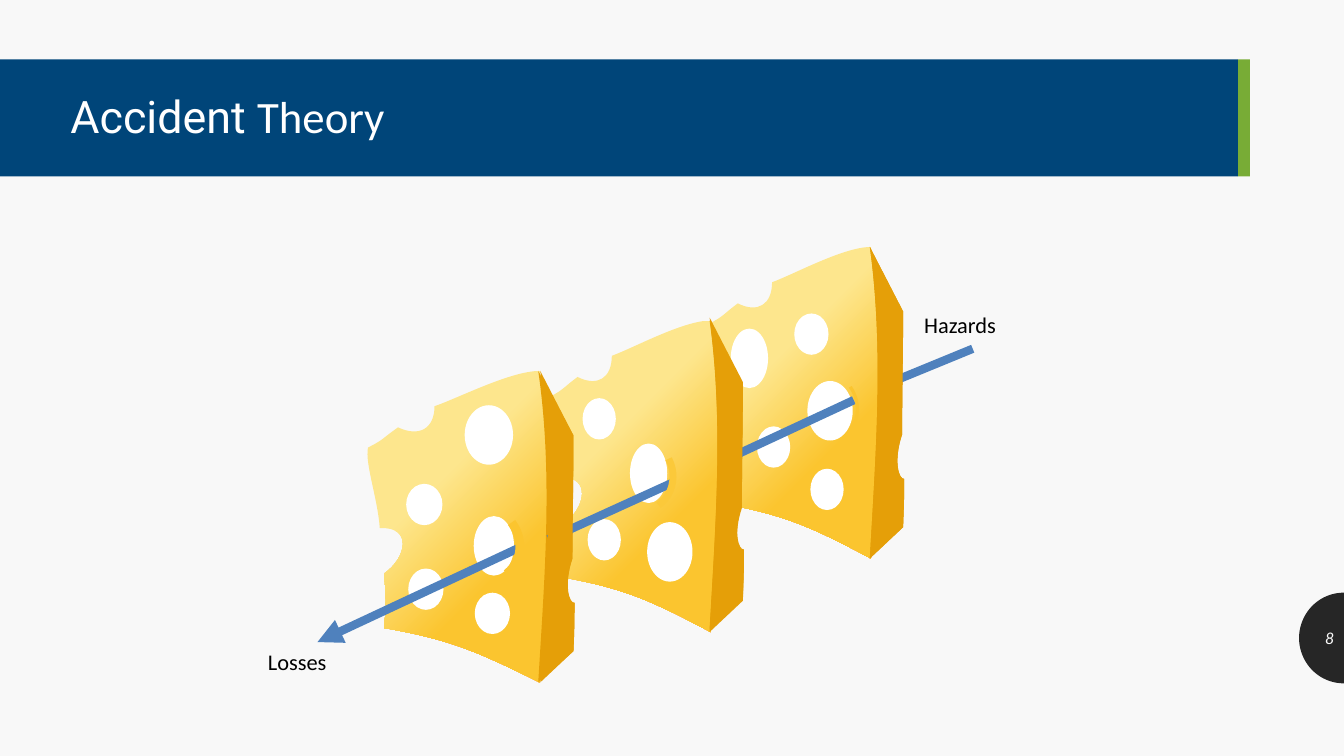
"""Build the Accident Theory slide with three cheese slices and a hazard path."""
import math

import pptx
import pptx.dml.color
import pptx.enum.shapes
import pptx.enum.text
import pptx.oxml.ns
import pptx.util
from lxml import etree

PX = 9144
KIND = pptx.enum.shapes.MSO_SHAPE
ALIGN = pptx.enum.text.PP_ALIGN
ANCHOR = pptx.enum.text.MSO_ANCHOR
qn = pptx.oxml.ns.qn
rgb = pptx.dml.color.RGBColor.from_string

deck = pptx.Presentation()
deck.slide_width, deck.slide_height = 4000 * PX // 3, 750 * PX
slide = deck.slides.add_slide(deck.slide_layouts[6])
slide.background.fill.solid()
slide.background.fill.fore_color.rgb = rgb("F8F8F8")
shapes = slide.shapes


def paint(shape, color):
    shape.shadow.inherit = False
    shape.line.fill.background()
    shape.fill.solid()
    shape.fill.fore_color.rgb = rgb(color)


def trace(parts, left, top, base, width):
    pen = shapes.build_freeform(left, top, scale=PX)
    pen.add_line_segments([(left + base, top + 309)], close=True)
    shape = pen.convert_to_shape()
    shape.width = width * PX
    track = shape._element.find(".//" + qn("a:path"))
    for step in list(track):
        track.remove(step)
    for spot, part in enumerate(parts):
        name = "a:moveTo" if spot == 0 else "a:lnTo" if len(part) == 2 else "a:cubicBezTo"
        step = etree.SubElement(track, qn(name))
        for x, y in zip(part[::2], part[1::2]):
            etree.SubElement(step, qn("a:pt"), x=str(x), y=str(y))
    etree.SubElement(track, qn("a:close"))
    return shape


turns = [math.radians(90 + 4.5 * step) for step in range(41)]
arch = [((4000 / 3 + 44.5 * math.cos(turn)) * PX, (633 - 45 * math.sin(turn)) * PX)
        for turn in turns]
badge = shapes.build_freeform(*arch[0], scale=1)
badge.add_line_segments(arch[1:], close=True)
paint(badge.convert_to_shape(), "262626")

for left, width, color in [(1228, 12, "78AC36"), (0, 1228, "004579")]:
    band = shapes.add_shape(KIND.RECTANGLE, left * PX, 59 * PX, width * PX, 116 * PX)
    paint(band, color)

face = [(1, 76), (16, 68, 13, 68, 29, 56), (49, 66, 63, 57, 63, 35),
        (85, 27, 134, 0, 161, 0), (176, 86, 171, 223, 161, 309),
        (101, 277, 75, 266, 16, 255), (19, 224, 17, 217, 16, 201),
        (37, 186, 43, 154, 12, 156), (10, 126, -2, 92, 1, 76)]
side = [(0, 0), (33, 64), (33, 108, 32, 150, 32, 186), (23, 213, 29, 231, 34, 230),
        (34, 245, 34, 253, 33, 278), (0, 309), (6, 203, 14, 102, 0, 0)]
slices = [
    (703, 245, 170, 863, 34, [(801, 378, 45, 59), (788, 311, 34, 41), (725, 326, 37, 59),
                              (751, 423, 33, 41), (804, 465, 33, 41)]),
    (544, 318, 170, 704, 34, [(642, 518, 45, 59), (625, 440, 37, 59), (583, 515, 33, 41),
                              (578, 395, 33, 41)]),
    (364, 368, 181, 534, 36, [(461, 402, 48, 59), (403, 480, 36, 41), (470, 512, 40, 59),
                              (405, 564, 35, 41), (471, 588, 35, 41)]),
]
for left, top, wide, edge, thick, holes in slices:
    front = trace(face, left, top, 170, wide)
    paint(front, "FBC52F")
    front.fill.gradient()
    front.fill.gradient_angle = 315
    stops = front.fill.gradient_stops
    for stop, spot, color in zip(stops, (0.37, 0.68), ("FDE68D", "FBC52F")):
        stop.position = spot
        stop.color.rgb = rgb(color)
    paint(trace(side, edge, top, 34, thick), "E59F08")
    for hole in holes:
        paint(shapes.add_shape(KIND.OVAL, *[size * PX for size in hole]), "FFFFFF")

beams = [(516, 543, 315, 637), (667, 479, 544, 535),
         (847, 397, 733, 450), (965, 346, 892, 376)]
for spot, ends in enumerate(beams):
    beam = shapes.add_connector(pptx.enum.shapes.MSO_CONNECTOR.STRAIGHT,
                                *[end * PX for end in ends])
    beam.line.color.rgb = rgb("4F81BD")
    beam.line.width = pptx.util.Pt(6)
    etree.SubElement(beam._element.spPr, qn("a:effectLst"))
    if spot == 0:
        etree.SubElement(beam.line._get_or_add_ln(), qn("a:tailEnd"), type="triangle")

for left, top in [(536, 368), (704, 315), (863, 245)]:
    paint(trace(side, left, top, 34, 34), "E59F08")

rims = [(443, 505, 52, 162, 6.25, "FBC52F"), (595, 436, 54.8, 167.03, 5, "FBC93A"),
        (778, 369, 54.8, 162, 2.25, "FBC52F")]
for left, top, turn, start, weight, color in rims:
    rim = shapes.add_shape(KIND.ARC, left * PX, top * PX, 74 * PX, 70 * PX)
    rim.shadow.inherit = False
    rim.rotation = turn
    rim.adjustments[0] = start
    rim.fill.background()
    rim.line.color.rgb = rgb(color)
    rim.line.width = pptx.util.Pt(weight)

labels = [
    ((60, 61, 930, 114), [("Accident ", "Roboto"), ("Theory", "Calibri")], 32, "FFFFFF",
     ANCHOR.MIDDLE, ALIGN.LEFT),
    ((256, 638, 201, 37), [("Losses", "Calibri")], 16, "000000", ANCHOR.TOP, ALIGN.LEFT),
    ((907, 304, 201, 37), [("Hazards", "Calibri")], 16, "000000", ANCHOR.TOP, ALIGN.LEFT),
    ((1289, 613, 44, 40), [("8", "Calibri")], 12, "F8F8F8", ANCHOR.MIDDLE, ALIGN.RIGHT),
]
for place, words, size, color, anchor, align in labels:
    frame = shapes.add_textbox(*[length * PX for length in place]).text_frame
    frame.word_wrap = True
    frame.vertical_anchor = anchor
    line = frame.paragraphs[0]
    line.alignment = align
    if size == 32:
        line.line_spacing = 0.9
    for word, font in words:
        run = line.add_run()
        run.text = word
        run.font.name = font
        run.font.size = pptx.util.Pt(size)
        run.font.color.rgb = rgb(color)
        run.font.italic = size == 12

deck.save("out.pptx")
